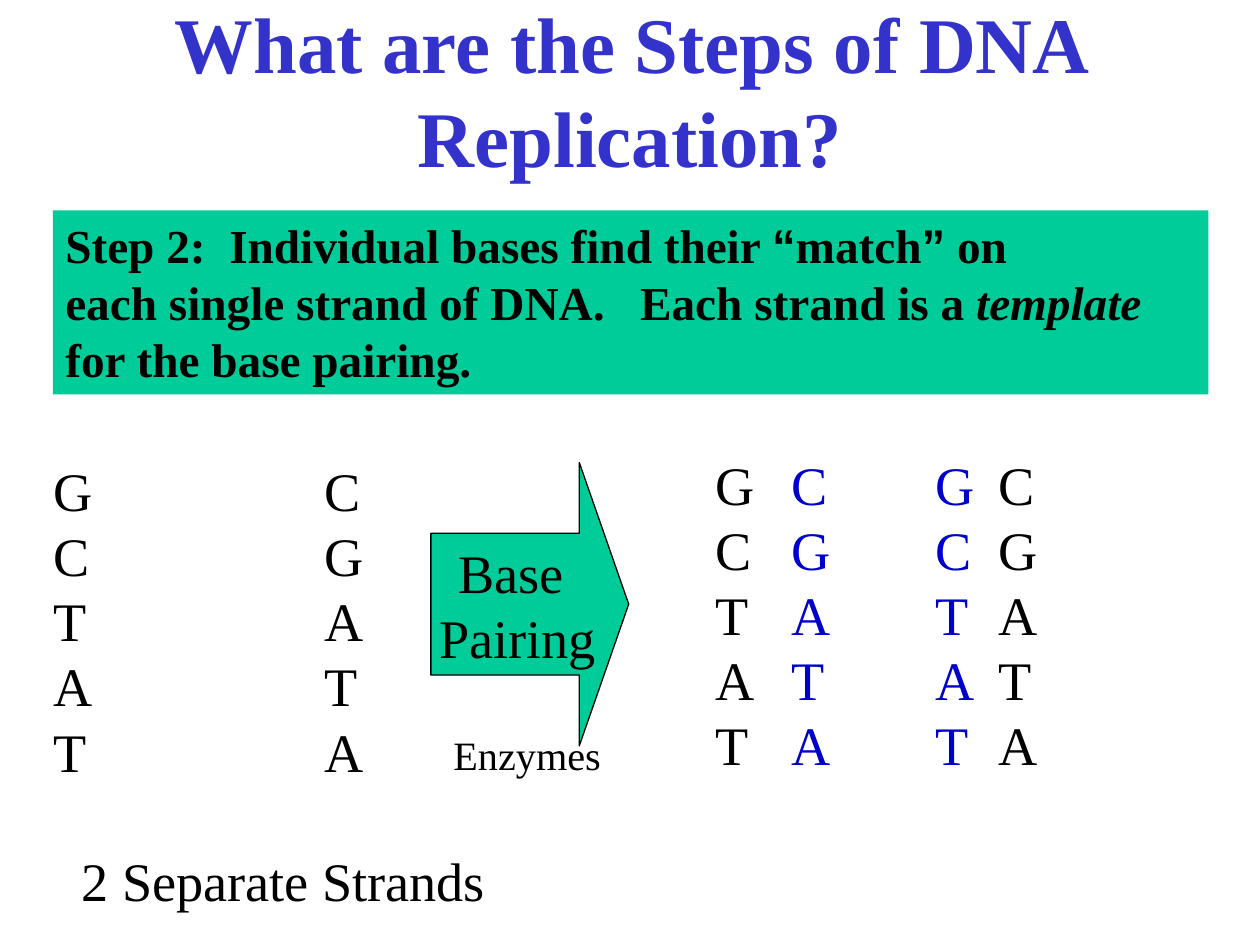
from pptx import Presentation
from pptx.dml.color import RGBColor
from pptx.enum.shapes import MSO_SHAPE as Shape
from pptx.enum.text import MSO_ANCHOR as Anchor, MSO_AUTO_SIZE as AutoSize, PP_ALIGN as Align
from pptx.oxml import parse_xml
from pptx.oxml.ns import nsdecls
from pptx.util import Inches, Pt

COLORS = {"title": "3333CC", "green": "00CC99", "black": "000000", "new_base": "0000CC"}
SERIF = "Times New Roman"
STRAND, PARTNER = "GCTAT", "CGATA"
BASE_SIZE = 31


def color(name):
    return RGBColor.from_string(COLORS[name])


def write_text(shape, lines, size=BASE_SIZE, ink="black", bold=False, align=Align.LEFT,
               anchor=Anchor.TOP, wrap=True, grow=False, tab=None):
    """Write one paragraph per line; a line is a string or a list of (text, format) runs."""
    frame = shape.text_frame
    frame.word_wrap = wrap
    frame.vertical_anchor = anchor
    frame.auto_size = AutoSize.SHAPE_TO_FIT_TEXT if grow else AutoSize.NONE
    for index, line in enumerate(lines):
        paragraph = frame.add_paragraph() if index else frame.paragraphs[0]
        paragraph.alignment = align
        if tab:
            paragraph._p.get_or_add_pPr().append(parse_xml(
                f'<a:tabLst {nsdecls("a")}><a:tab pos="{Inches(tab)}" algn="l"/></a:tabLst>'))
        for text, extra in [(line, {})] if isinstance(line, str) else line:
            run = paragraph.add_run()
            run.text = text
            run.font.name = extra.get("font", SERIF)
            run.font.size = Pt(size)
            run.font.bold = bold
            run.font.italic = extra.get("italic", False)
            run.font.color.rgb = color(ink)
    return frame


def add_text(slide, left, top, width, height, lines, **text_format):
    box = slide.shapes.add_textbox(Inches(left), Inches(top), Inches(width), Inches(height))
    return write_text(box, lines, **text_format)


def add_green_shape(slide, kind, left, top, width, height, outlined=False):
    shape = slide.shapes.add_shape(kind, Inches(left), Inches(top), Inches(width), Inches(height))
    shape.shadow.inherit = False
    shape.fill.solid()
    shape.fill.fore_color.rgb = color("green")
    if outlined:
        shape.line.color.rgb = color("black")
        shape.line.width = Pt(0.75)
    else:
        shape.line.fill.background()
    return shape


def add_separate_strands(slide):
    pairs = [f"{base}\t{partner}" for base, partner in zip(STRAND, PARTNER)]
    frame = add_text(slide, 0.33, 3.58, 3.92, 3.75, pairs + ["2 Separate Strands"], tab=2.15)
    caption = frame.paragraphs[-1]
    caption.space_before = Pt(37)
    caption._p.get_or_add_pPr().set("marL", str(Inches(0.22)))


def add_base_columns(slide):
    columns = [(5.58, STRAND, "black"), (6.18, PARTNER, "new_base"),
               (7.33, STRAND, "new_base"), (7.83, PARTNER, "black")]
    for left, bases, ink in columns:
        add_text(slide, left, 3.53, 0.52, 2.71, bases, ink=ink, wrap=False, grow=True)


def main():
    presentation = Presentation()
    presentation.slide_width, presentation.slide_height = Inches(10), Inches(7.5)
    slide = presentation.slides.add_slide(presentation.slide_layouts[6])

    # Title
    add_text(slide, 0.75, 0.08, 8.5, 1.25, ["What are the Steps of DNA Replication?"],
             size=45, ink="title", bold=True, align=Align.CENTER, anchor=Anchor.MIDDLE)

    # Step description
    step = add_green_shape(slide, Shape.RECTANGLE, 0.42, 1.67, 9.17, 1.46)
    write_text(step, [
        [("Step 2:  Individual bases find their ", {}), ("“", {"font": "Arial"}),
         ("match", {}), ("”", {"font": "Arial"}), (" on", {})],
        [("each single strand of DNA.   Each strand is a ", {}),
         ("template", {"italic": True}), (" for the base pairing.", {})],
    ], size=27, bold=True, grow=True)

    # Strands before pairing
    add_separate_strands(slide)

    # Pairing arrow
    arrow = add_green_shape(slide, Shape.RIGHT_ARROW, 3.42, 3.67, 1.57, 2.25, outlined=True)
    arrow.adjustments[0], arrow.adjustments[1] = 0.5, 0.25
    write_text(arrow, ["Base ", "Pairing"], align=Align.CENTER, anchor=Anchor.MIDDLE, wrap=False)

    # Strands after pairing
    add_base_columns(slide)
    add_text(slide, 3.5, 5.75, 1.38, 0.49, ["Enzymes"], size=23, wrap=False, grow=True)

    presentation.save("out.pptx")


if __name__ == "__main__":
    main()
